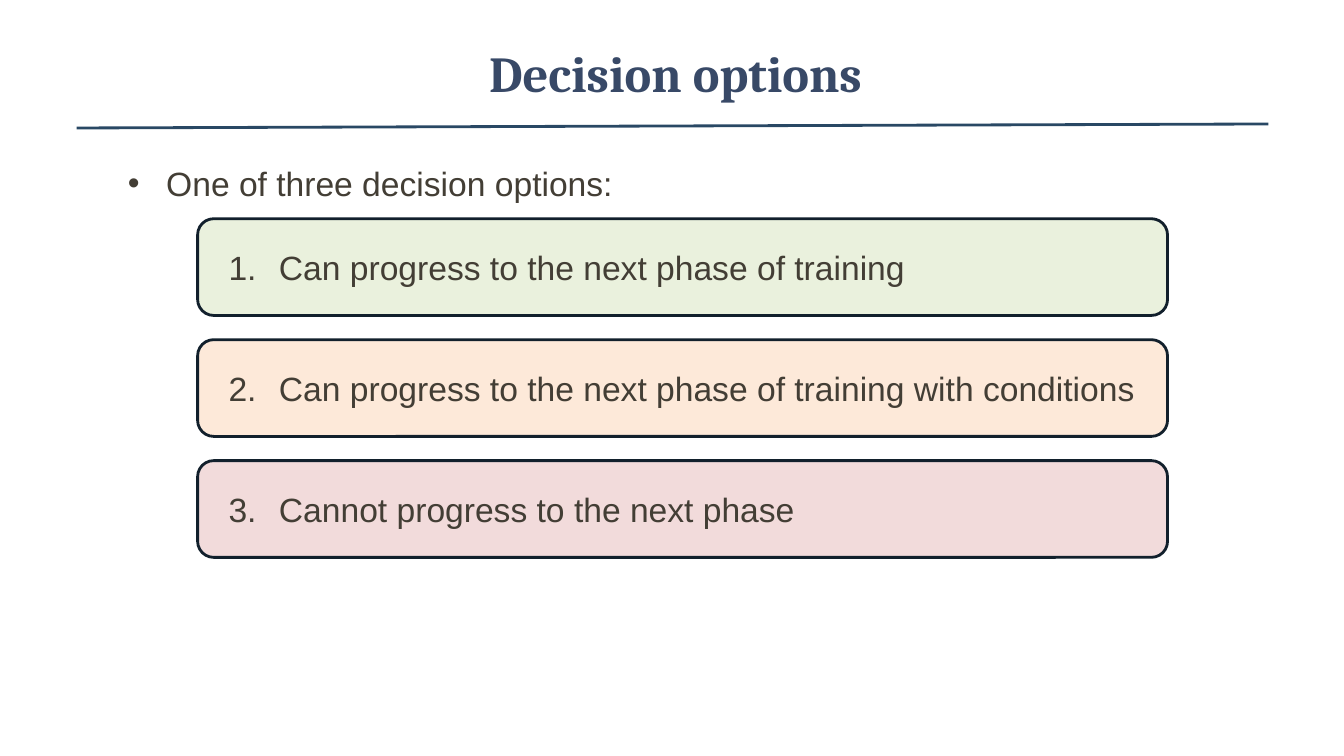
from dataclasses import dataclass

from lxml import etree
from pptx import Presentation
from pptx.dml.color import RGBColor
from pptx.enum import shapes, text
from pptx.oxml.ns import qn
from pptx.util import Inches, Pt


@dataclass(frozen=True)
class Theme:
    title_color: RGBColor = RGBColor.from_string("384967")
    text_color: RGBColor = RGBColor.from_string("433E35")
    rule_color: RGBColor = RGBColor.from_string("294864")
    border_color: RGBColor = RGBColor.from_string("12202C")
    title_font: str = "Cambria"
    body_font: str = "Arial"
    title_size: Pt = Pt(36)
    body_size: Pt = Pt(24)
    line_width: Pt = Pt(2)


@dataclass(frozen=True)
class Option:
    label: str
    fill: str


THEME = Theme()
OPTIONS = [
    Option("Can progress to the next phase of training", "EAF1DD"),
    Option("Can progress to the next phase of training with conditions", "FDE9D9"),
    Option("Cannot progress to the next phase", "F2DBDB"),
]
CARD_LEFT, CARD_TOP, CARD_WIDTH, CARD_HEIGHT = 1.96, 2.17, 9.62, 0.96
CARD_PITCH = 1.2


def add_run(p, content: str, font: str, size: Pt, color: RGBColor, bold: bool = False) -> None:
    r = p.add_run()
    r.text = content
    r.font.name, r.font.size, r.font.bold = font, size, bold
    r.font.color.rgb = color


def add_list_item(p, content: str, indent: float, marker: str, **attributes: str) -> None:
    """Fill a paragraph as a list item with a hanging indent in inches."""
    p.alignment = text.PP_ALIGN.LEFT
    pPr = p._p.get_or_add_pPr()
    pPr.set("marL", str(Inches(indent)))
    pPr.set("indent", str(-Inches(indent)))
    etree.SubElement(pPr, qn("a:buFont"), typeface=THEME.body_font)
    etree.SubElement(pPr, qn(marker), **attributes)
    add_run(p, content, THEME.body_font, THEME.body_size, THEME.text_color)


def add_title(slide, content: str) -> None:
    sp = slide.shapes.title
    sp.left, sp.top, sp.width, sp.height = map(Inches, (0, 0.32, 13.4, 0.79))
    tf = sp.text_frame
    tf.auto_size = text.MSO_AUTO_SIZE.NONE
    tf.vertical_anchor = text.MSO_ANCHOR.MIDDLE
    p = tf.paragraphs[0]
    p.alignment = text.PP_ALIGN.CENTER
    add_run(p, content, THEME.title_font, THEME.title_size, THEME.title_color, bold=True)


def add_title_rule(slide) -> None:
    rule = slide.shapes.add_connector(
        shapes.MSO_CONNECTOR.STRAIGHT, *map(Inches, (0.76, 1.27, 12.58, 1.23))
    )
    rule.line.color.rgb = THEME.rule_color
    rule.line.width = THEME.line_width
    etree.SubElement(rule._element.spPr, qn("a:effectLst"))


def add_intro(slide, content: str) -> None:
    box = slide.shapes.add_textbox(*map(Inches, (1.17, 1.57, 10.28, 0.5)))
    tf = box.text_frame
    tf.word_wrap = True
    add_list_item(tf.paragraphs[0], content, 0.38, "a:buChar", char="•")


def add_option_card(slide, number: int, option: Option) -> None:
    top = CARD_TOP + (number - 1) * CARD_PITCH
    sp = slide.shapes.add_shape(
        shapes.MSO_SHAPE.ROUNDED_RECTANGLE,
        *map(Inches, (CARD_LEFT, top, CARD_WIDTH, CARD_HEIGHT)),
    )
    sp.shadow.inherit = False
    sp.fill.solid()
    sp.fill.fore_color.rgb = RGBColor.from_string(option.fill)
    sp.line.color.rgb = THEME.border_color
    sp.line.width = THEME.line_width
    tf = sp.text_frame
    tf.word_wrap = True
    tf.vertical_anchor = text.MSO_ANCHOR.MIDDLE
    tf.margin_left = Inches(0.26)
    add_list_item(tf.paragraphs[0], option.label, 0.5, "a:buAutoNum",
                  type="arabicPeriod", startAt=str(number))


def main() -> None:
    prs = Presentation()
    prs.slide_width, prs.slide_height = Inches(13.33), Inches(7.5)
    slide = prs.slides.add_slide(prs.slide_layouts.get_by_name("Title Only"))
    add_title_rule(slide)
    add_title(slide, "Decision options")
    add_intro(slide, "One of three decision options:")
    for number, option in enumerate(OPTIONS, start=1):
        add_option_card(slide, number, option)
    prs.save("out.pptx")


if __name__ == "__main__":
    main()
